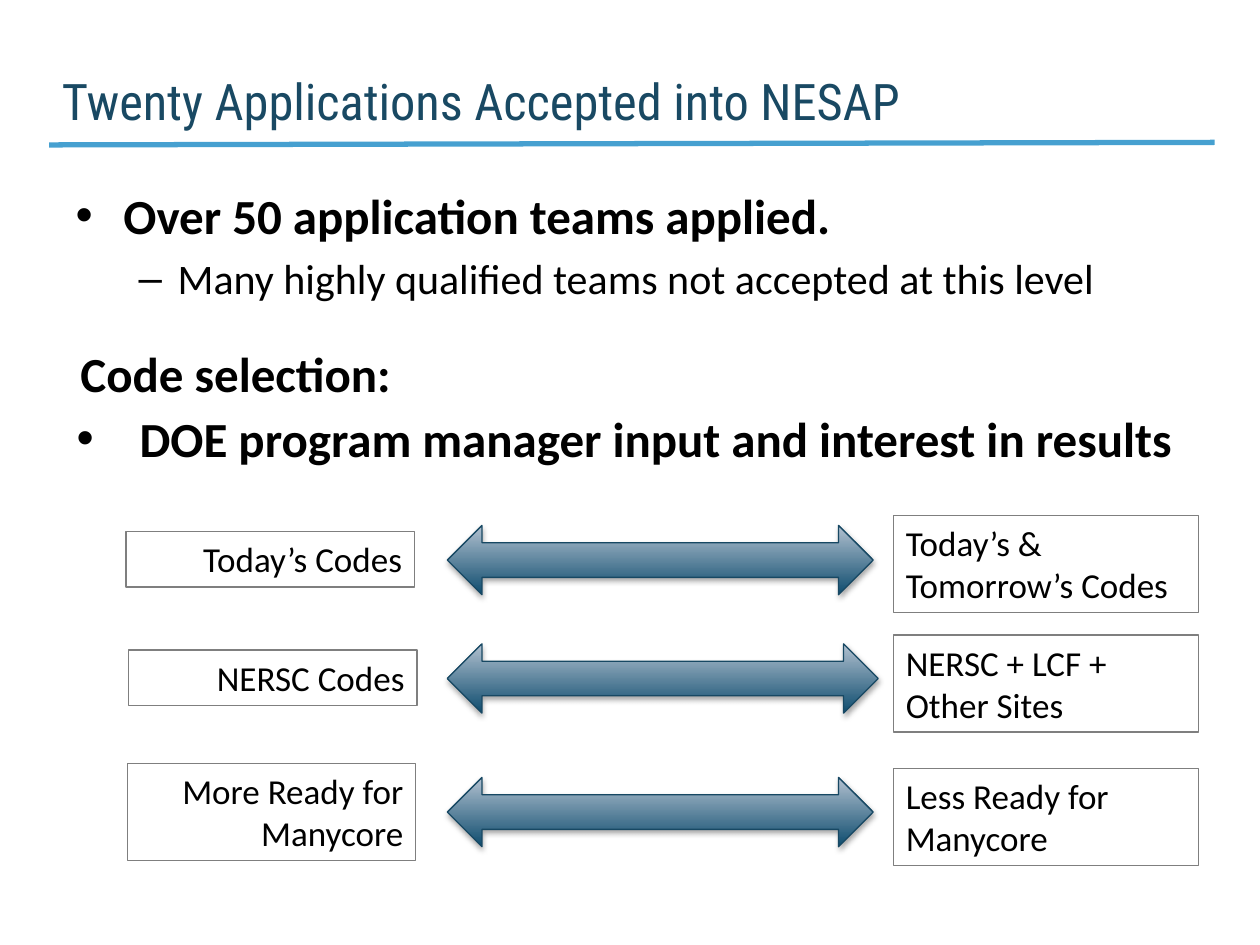
"""Build the slide on accepted applications and the code selection spectrum."""
from dataclasses import dataclass

from lxml.etree import SubElement
from pptx import Presentation
from pptx.dml.color import RGBColor
from pptx.enum.shapes import MSO_CONNECTOR, MSO_SHAPE
from pptx.enum.text import MSO_ANCHOR, MSO_AUTO_SIZE, PP_ALIGN
from pptx.oxml.ns import qn
from pptx.util import Inches, Pt


@dataclass(frozen=True)
class Theme:
    body_font: str = "Calibri"
    title_font: str = "Roboto Condensed"
    title_color: str = "194963"
    rule_color: str = "46A0D0"
    text_color: str = "000000"
    background: str = "FFFFFF"
    border: str = "7F7F7F"
    arrow_border: str = "174863"
    arrow_dark: str = "0E4C6E"
    arrow_light: str = "B2C1D0"
    title_size: float = 28.8
    heading_size: float = 28
    detail_size: float = 24
    label_size: float = 20
    thin: float = 0.75


@dataclass(frozen=True)
class Box:
    column: float
    row: float
    columns: float
    rows: float

    def lengths(self) -> tuple:
        return tuple(map(grid, (self.column, self.row, self.columns, self.rows)))


@dataclass(frozen=True)
class Spectrum:
    left_text: str
    right_text: str
    middle: float
    left_column: float
    left_lines: int
    arrow_columns: float


THEME = Theme()
CELL = 0.1
LABEL_ROWS = {1: 4.4, 2: 7.7}
ARROW_ROWS = 5.5
SPECTRA = (
    Spectrum("Today’s Codes", "Today’s & Tomorrow’s Codes", 44.4, 10, 1, 33.8),
    Spectrum("NERSC Codes", "NERSC + LCF + Other Sites", 53.8, 10.2, 1, 34.2),
    Spectrum("More Ready for Manycore", "Less Ready for Manycore", 64.4, 10.1, 2, 33.8),
)


def grid(cells: float) -> int:
    """Turn a number of grid cells into a length."""
    return Inches(round(cells * CELL, 2))


def color(value: str) -> RGBColor:
    """Turn a hexadecimal value into a colour."""
    return RGBColor.from_string(value)


def place(shape, box: Box) -> None:
    """Move and size a shape on the grid."""
    shape.left, shape.top, shape.width, shape.height = box.lengths()


def format_paragraph(paragraph, size: float, bold: bool = False, font: str = THEME.body_font,
                     font_color: str = THEME.text_color, align=PP_ALIGN.LEFT) -> None:
    """Set the alignment and the type of a paragraph."""
    paragraph.alignment = align
    paragraph.space_before = Pt(0)
    for run in paragraph.runs:
        run.font.name = font
        run.font.size = Pt(size)
        run.font.bold = bold
        run.font.color.rgb = color(font_color)


def set_indent(paragraph, margin: float, hanging: float, bullet: str = "") -> None:
    """Give a paragraph a hanging indent and a bullet, if any."""
    properties = paragraph._p.get_or_add_pPr()
    properties.set("marL", str(Inches(margin)))
    properties.set("indent", str(-Inches(hanging)))
    if bullet:
        SubElement(properties, qn("a:buFont"), typeface="Arial")
        SubElement(properties, qn("a:buChar"), char=bullet)
    else:
        SubElement(properties, qn("a:buNone"))


def add_title(slide, text: str) -> None:
    """Fill the title placeholder."""
    title = slide.shapes.title
    place(title, Box(3.9, 2, 74.6, 8.4))
    frame = title.text_frame
    frame.text = text
    frame.auto_size = MSO_AUTO_SIZE.NONE
    frame.vertical_anchor = MSO_ANCHOR.BOTTOM
    frame.margin_top = frame.margin_bottom = 0
    set_indent(frame.paragraphs[0], 0.25, 0.25)
    format_paragraph(frame.paragraphs[0], THEME.title_size, font=THEME.title_font,
                     font_color=THEME.title_color)


def add_rule(slide) -> None:
    """Draw the line under the title."""
    rule = slide.shapes.add_connector(
        MSO_CONNECTOR.STRAIGHT, grid(3.9), grid(11.5), grid(96.4), grid(11.3))
    rule.line.color.rgb = color(THEME.rule_color)
    rule.line.width = Pt(3)
    SubElement(rule._element.spPr, qn("a:effectLst"))


def add_body(slide) -> None:
    """Fill the body placeholder with the two-level list."""
    body = slide.placeholders[1]
    place(body, Box(5, 14.2, 90, 12.1))
    frame = body.text_frame
    frame.text = ("Over 50 application teams applied.\n"
                  "Many highly qualified teams not accepted at this level")
    frame.auto_size = MSO_AUTO_SIZE.NONE
    heading, detail = frame.paragraphs
    set_indent(heading, 0.38, 0.38, "•")
    format_paragraph(heading, THEME.heading_size, bold=True)
    detail.level = 1
    set_indent(detail, 0.81, 0.31, "–")
    format_paragraph(detail, THEME.detail_size)
    detail.space_before = Pt(0.2 * THEME.detail_size)


def add_heading(slide, text: str, box: Box, bullet: str = "") -> None:
    """Add a bold line of text, with a bullet if one is given."""
    frame = slide.shapes.add_textbox(*box.lengths()).text_frame
    frame.word_wrap = True
    frame.text = text
    if bullet:
        set_indent(frame.paragraphs[0], 0.5, 0.5, bullet)
    format_paragraph(frame.paragraphs[0], THEME.heading_size, bold=True)


def add_label(slide, text: str, box: Box, align) -> None:
    """Add a bordered label."""
    label = slide.shapes.add_shape(MSO_SHAPE.RECTANGLE, *box.lengths())
    label.shadow.inherit = False
    label.fill.solid()
    label.fill.fore_color.rgb = color(THEME.background)
    label.line.color.rgb = color(THEME.border)
    label.line.width = Pt(THEME.thin)
    frame = label.text_frame
    frame.word_wrap = True
    frame.auto_size = MSO_AUTO_SIZE.SHAPE_TO_FIT_TEXT
    frame.vertical_anchor = MSO_ANCHOR.TOP
    frame.text = text
    format_paragraph(frame.paragraphs[0], THEME.label_size, align=align)


def add_arrow(slide, box: Box) -> None:
    """Add a shaded double arrow with a soft shadow."""
    arrow = slide.shapes.add_shape(MSO_SHAPE.LEFT_RIGHT_ARROW, *box.lengths())
    arrow.fill.gradient()
    arrow.fill.gradient_angle = 90
    for stop, value in zip(arrow.fill.gradient_stops, (THEME.arrow_dark, THEME.arrow_light)):
        stop.color.rgb = color(value)
    arrow.line.color.rgb = color(THEME.arrow_border)
    arrow.line.width = Pt(THEME.thin)
    arrow.shadow.inherit = False
    effects = arrow._element.spPr.find(qn("a:effectLst"))
    shadow = SubElement(effects, qn("a:outerShdw"), blurRad=str(Pt(3.1)), dist=str(Pt(1.8)),
                        dir="5400000", rotWithShape="0")
    shade = SubElement(shadow, qn("a:srgbClr"), val=THEME.text_color)
    SubElement(shade, qn("a:alpha"), val="35000")


def add_spectrum(slide, spectrum: Spectrum) -> None:
    """Add two opposite labels with the arrow between them."""
    left_rows, right_rows = LABEL_ROWS[spectrum.left_lines], LABEL_ROWS[2]
    add_label(slide, spectrum.left_text,
              Box(spectrum.left_column, spectrum.middle - left_rows / 2, 22.9, left_rows),
              PP_ALIGN.RIGHT)
    add_arrow(slide, Box(35.5, spectrum.middle - ARROW_ROWS / 2,
                         spectrum.arrow_columns, ARROW_ROWS))
    add_label(slide, spectrum.right_text,
              Box(70.9, spectrum.middle + 0.4 - right_rows / 2, 24.2, right_rows),
              PP_ALIGN.LEFT)


def main() -> None:
    """Build and save the presentation."""
    presentation = Presentation()
    presentation.slide_width, presentation.slide_height = grid(100), grid(75)
    slide = presentation.slides.add_slide(presentation.slide_layouts[1])
    add_rule(slide)
    add_title(slide, "Twenty Applications Accepted into NESAP")
    add_body(slide)
    add_heading(slide, "Code selection:", Box(5.4, 26.8, 94.6, 5.7))
    add_heading(slide, "DOE program manager input and interest in results",
                Box(5.1, 31.9, 94.9, 5.7), "•")
    for spectrum in SPECTRA:
        add_spectrum(slide, spectrum)
    presentation.save("out.pptx")


if __name__ == "__main__":
    main()
